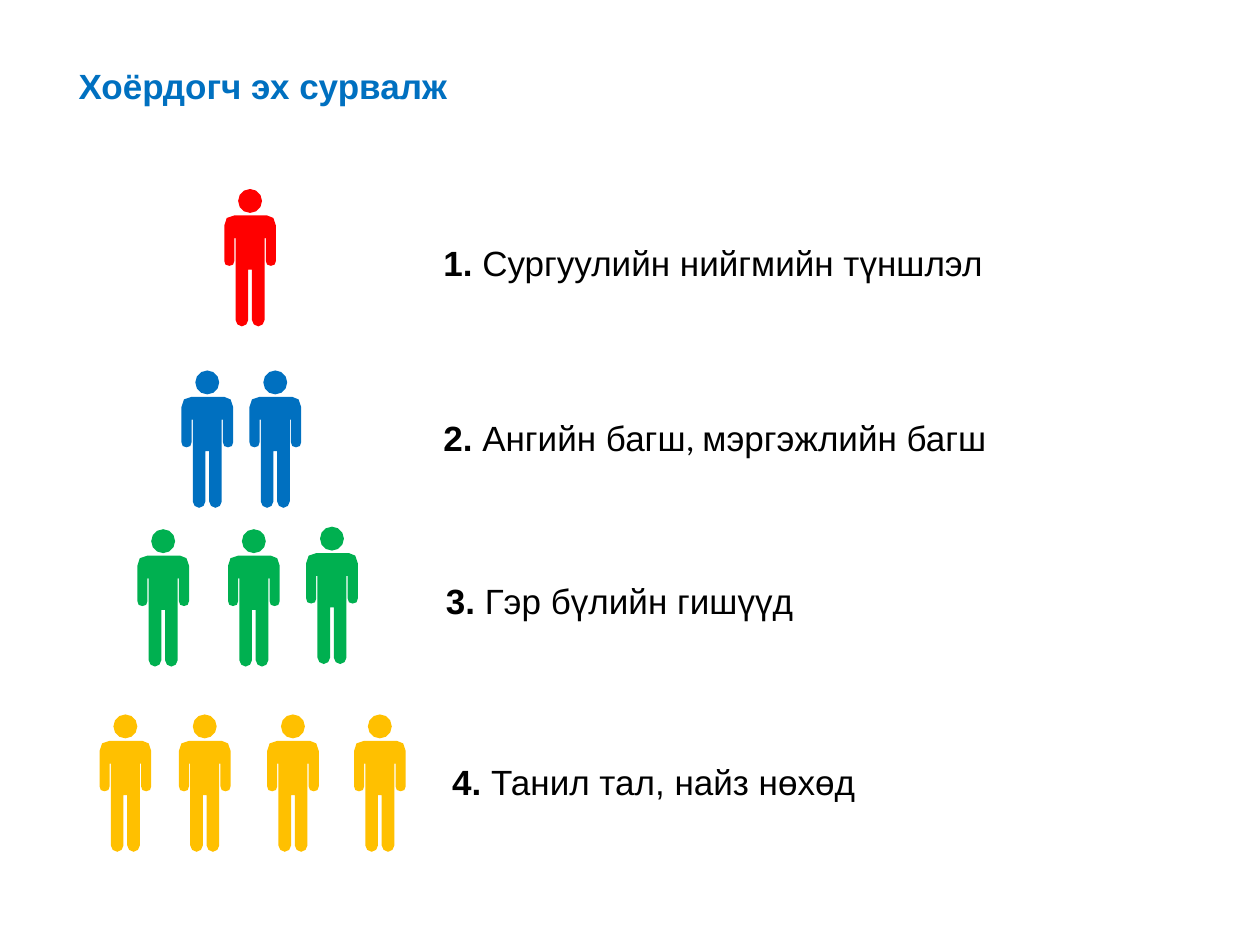
from math import cos, pi, sin

from pptx import Presentation
from pptx.dml.color import RGBColor
from pptx.enum import text
from pptx.util import Inches, Pt

TITLE = "Хоёрдогч эх сурвалж "

# colour, (left, top) of each person
GROUPS = [
    ("FF0000", [(1.78, 1.5)]),
    ("0070C0", [(1.44, 2.94), (1.98, 2.94)]),
    ("00B050", [(1.09, 4.2), (1.81, 4.2), (2.43, 4.18)]),
    ("FFC000", [(0.79, 5.67), (1.42, 5.67), (2.12, 5.67), (2.81, 5.67)]),
]

# left, top, line spacing, (words, font) runs
LABELS = [
    (3.42, 1.82, 1.15, [("Сургуулийн нийгмийн түншлэл", "Arial")]),
    (3.42, 3.26, 1, [("Ангийн багш", "Arial"), (", ", "Calibri"),
                     ("мэргэжлийн багш", "Arial")]),
    (3.44, 4.5, 1.15, [("Гэр бүлийн гишүүд", "Arial")]),
    (3.49, 5.99, 1, [("Танил тал, найз нөхөд", "Arial")]),
]

# Hundredths of an inch, clockwise, with the round corners cut in two
BODY = [
    (8, 21), (34, 21), (39, 23), (41, 29),
    (41, 57), (40, 60), (37, 61), (34, 60), (33, 57),
    (33, 39), (32, 39),
    (32, 104), (30.5, 107.5), (27, 109), (23.5, 107.5), (22, 104),
    (22, 64), (19, 64),
    (19, 104), (17.5, 107.5), (14, 109), (10.5, 107.5), (9, 104),
    (9, 39), (8, 39),
    (8, 57), (7, 60), (4, 61), (1, 60), (0, 57),
    (0, 29), (2, 23),
]
HEAD = (20.5, 9.5, 9.5)  # centre x, centre y, radius


def color(code):
    return RGBColor.from_string(code)


def circle(x, y, r, count=12):
    turns = [2 * pi * i / count for i in range(count)]
    return [(x + r * cos(a), y + r * sin(a)) for a in turns]


def add_person(slide, left, top, code):
    body, head = ([(Inches(left + x / 100), Inches(top + y / 100)) for x, y in pts]
                  for pts in (BODY, circle(*HEAD)))
    pen = slide.shapes.build_freeform(*body[0])
    pen.add_line_segments(body[1:])
    pen.move_to(*head[0])
    pen.add_line_segments(head[1:])
    shape = pen.convert_to_shape()
    shape.shadow.inherit = False
    shape.fill.solid()
    shape.fill.fore_color.rgb = color(code)
    shape.line.fill.background()


def add_run(para, words, font="Arial", code="000000", bold=False):
    run = para.add_run()
    run.text = words
    run.font.name = font
    run.font.size = Pt(20)
    run.font.bold = bold
    run.font.color.rgb = color(code)


def add_label(slide, num, left, top, gap, runs):
    box = slide.shapes.add_textbox(Inches(left), Inches(top), Inches(5.93), Inches(0.44))
    box.text_frame.word_wrap = True
    para = box.text_frame.paragraphs[0]
    para.line_spacing = float(gap)
    add_run(para, f"{num}. ", bold=True)
    for words, font in runs:
        add_run(para, words, font)


def add_title(slide):
    title = slide.shapes.title
    title.left, title.top = Inches(0.37), Inches(0.46)
    title.width, title.height = Inches(3.51), Inches(0.44)
    frame = title.text_frame
    frame.auto_size = text.MSO_AUTO_SIZE.NONE
    frame.vertical_anchor = text.MSO_ANCHOR.TOP
    para = frame.paragraphs[0]
    para.alignment = text.PP_ALIGN.CENTER
    add_run(para, TITLE, code="0070C0", bold=True)


def main():
    prs = Presentation()
    prs.slide_width, prs.slide_height = Inches(10), Inches(7.5)
    slide = prs.slides.add_slide(prs.slide_layouts[5])
    add_title(slide)
    for code, spots in GROUPS:
        for left, top in spots:
            add_person(slide, left, top, code)
    for num, label in enumerate(LABELS, 1):
        add_label(slide, num, *label)
    prs.save("out.pptx")


if __name__ == "__main__":
    main()
